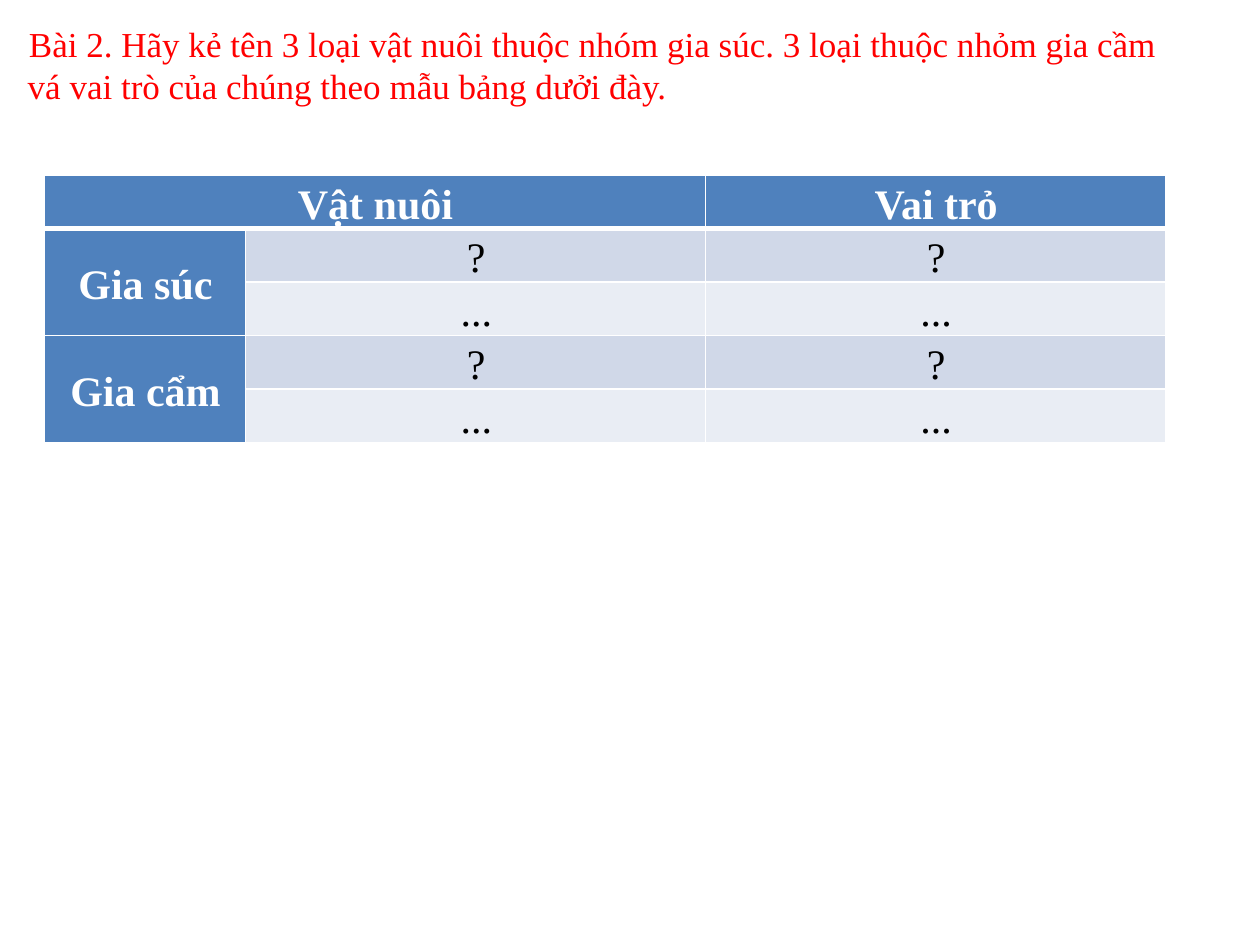
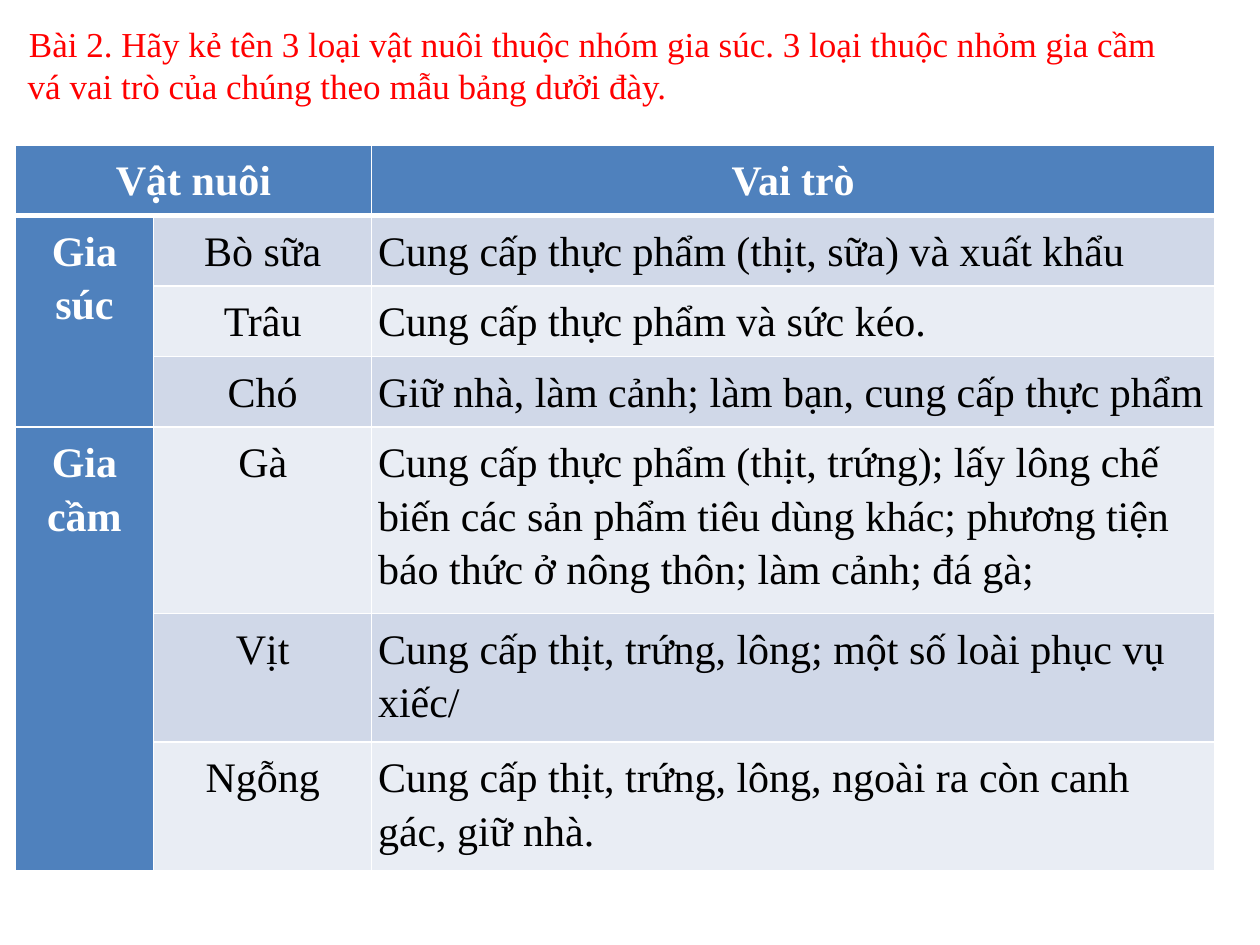
"""Builds two slides about farm animals: an empty table to fill in and its answers."""
from dataclasses import dataclass

from lxml.etree import SubElement
from pptx import Presentation
from pptx.dml.color import RGBColor
from pptx.enum.text import MSO_ANCHOR as Anchor, MSO_AUTO_SIZE as Fit, PP_ALIGN as Align
from pptx.oxml import parse_xml
from pptx.oxml.ns import nsdecls, qn
from pptx.util import Inches, Pt


@dataclass(frozen=True)
class Theme:
    """Holds the colours and type shared by both slides."""
    font: str = "Times New Roman"
    title: int = 20
    body: int = 24
    red: str = "FF0000"
    white: str = "FFFFFF"
    black: str = "000000"
    head: str = "4F81BD"
    bands: tuple = ("E9EDF4", "D0D8E8")
    thin: int = 1
    thick: int = 3
    lead: float = 1.15


THEME = Theme()
TASK = ("Bài 2. Hãy kẻ tên 3 loại vật nuôi thuộc nhóm gia súc. 3 loại thuộc nhỏm gia cầm "
        "vá vai trò của chúng theo mẫu bảng dưởi đày.")
TOP, MID, LOW = Anchor.TOP, Anchor.MIDDLE, Anchor.BOTTOM

BLANK = {
    "at": (0.35, 1.39),
    "cols": (1.6, 3.65, 3.65),
    "rows": (0.42,) * 5,
    "anchors": (LOW, MID, LOW, MID, MID),
    "inset": (0.01, 0),
    "indent": 0.01,
    "align": Align.CENTER,
    "head": ("Vật nuôi", "Vai trỏ"),
    "groups": {
        "Gia súc": [("?", "?"), ("...", "...")],
        "Gia cẩm": [("?", "?"), ("...", "...")],
    },
}
ANSWER = {
    "at": (0.12, 1.15),
    "cols": (1.1, 1.73, 6.69),
    "rows": (0.56,) * 4 + (1.48, 1.02, 1.02),
    "anchors": (TOP,) * 7,
    "inset": (0.05, 0.05),
    "indent": 0,
    "align": Align.LEFT,
    "head": ("Vật nuôi", "Vai trò"),
    "groups": {
        "Gia súc": [
            ("Bò sữa", "Cung cấp thực phẩm (thịt, sữa) và xuất khẩu"),
            ("Trâu", "Cung cấp thực phẩm và sức kéo."),
            ("Chó", "Giữ nhà, làm cảnh; làm bạn, cung cấp thực phẩm"),
        ],
        "Gia cầm": [
            ("Gà", "Cung cấp thực phẩm (thịt, trứng); lấy lông chế biến các sản phẩm "
                   "tiêu dùng khác; phương tiện báo thức ở nông thôn; làm cảnh; đá gà;"),
            ("Vịt", "Cung cấp thịt, trứng, lông; một số loài phục vụ xiếc/"),
            ("Ngỗng", "Cung cấp thịt, trứng, lông, ngoài ra còn canh gác, giữ nhà."),
        ],
    },
}


def paint(fill, color):
    """Gives a fill one solid colour."""
    fill.solid()
    fill.fore_color.rgb = RGBColor.from_string(color)


def write(para, text, size, color, bold=False, indent=0):
    """Adds one styled run to a paragraph."""
    props = para._p.get_or_add_pPr()
    props.set("marL", "0")
    props.set("indent", str(Inches(indent)))
    run = para.add_run()
    run.text = text
    font = run.font
    font.name, font.size, font.bold = THEME.font, Pt(size), bold
    font.color.rgb = RGBColor.from_string(color)


def edge(cell, row):
    """Draws the white cell borders, thick under the head row."""
    wide = {"lnB": row == 0, "lnT": row == 1}
    props = cell._tc.get_or_add_tcPr()
    for spot, side in enumerate(("lnL", "lnR", "lnT", "lnB")):
        width = THEME.thick if wide.get(side) else THEME.thin
        line = parse_xml(f'<a:{side} {nsdecls("a")} w="{Pt(width)}"/>')
        solid = SubElement(line, qn("a:solidFill"))
        SubElement(solid, qn("a:srgbClr"), val=THEME.white)
        props.insert(spot, line)


def add_title(slide):
    """Places the task text in the title placeholder."""
    title = slide.shapes.title
    title.left, title.top, title.width, title.height = map(Inches, (0.12, 0.13, 9.37, 0.77))
    paint(title.fill, THEME.white)
    frame = title.text_frame
    frame.word_wrap, frame.auto_size, frame.vertical_anchor = True, Fit.NONE, MID
    para = frame.paragraphs[0]
    para.alignment = Align.LEFT
    write(para, TASK, THEME.title, THEME.red, indent=0.01)


def add_grid(slide, data):
    """Builds a table with a head row and merged group cells."""
    cols, rows = data["cols"], data["rows"]
    size = data["at"] + (sum(cols), sum(rows))
    grid = slide.shapes.add_table(len(rows), len(cols), *map(Inches, size)).table
    for col, width in zip(grid.columns, cols):
        col.width = Inches(width)
    for row, height in zip(grid.rows, rows):
        row.height = Inches(height)

    kind, role = data["head"]
    lines = [(kind, "", role)]
    grid.cell(0, 0).merge(grid.cell(0, 1))
    for group, items in data["groups"].items():
        first = len(lines)
        lines += [("" if i else group, *item) for i, item in enumerate(items)]
        grid.cell(first, 0).merge(grid.cell(len(lines) - 1, 0))

    side, ends = map(Inches, data["inset"])
    for r, line in enumerate(lines):
        for c, text in enumerate(line):
            cell = grid.cell(r, c)
            head = r == 0 or c == 0
            paint(cell.fill, THEME.head if head else THEME.bands[r % 2])
            edge(cell, r)
            cell.margin_left = cell.margin_right = side
            cell.margin_top = cell.margin_bottom = ends
            cell.vertical_anchor = MID if c == 0 and r and data is BLANK else data["anchors"][r]
            if text:
                para = cell.text_frame.paragraphs[0]
                para.alignment = data["align"] if c == 2 and r else Align.CENTER
                para.line_spacing = THEME.lead
                color = THEME.white if head else THEME.black
                write(para, text, THEME.body, color, head, data["indent"])


def main():
    """Builds and saves the deck."""
    deck = Presentation()
    deck.slide_width, deck.slide_height = Inches(10), Inches(7.5)
    for data in (BLANK, ANSWER):
        slide = deck.slides.add_slide(deck.slide_layouts[5])
        add_title(slide)
        add_grid(slide, data)
    deck.save("out.pptx")


if __name__ == "__main__":
    main()
